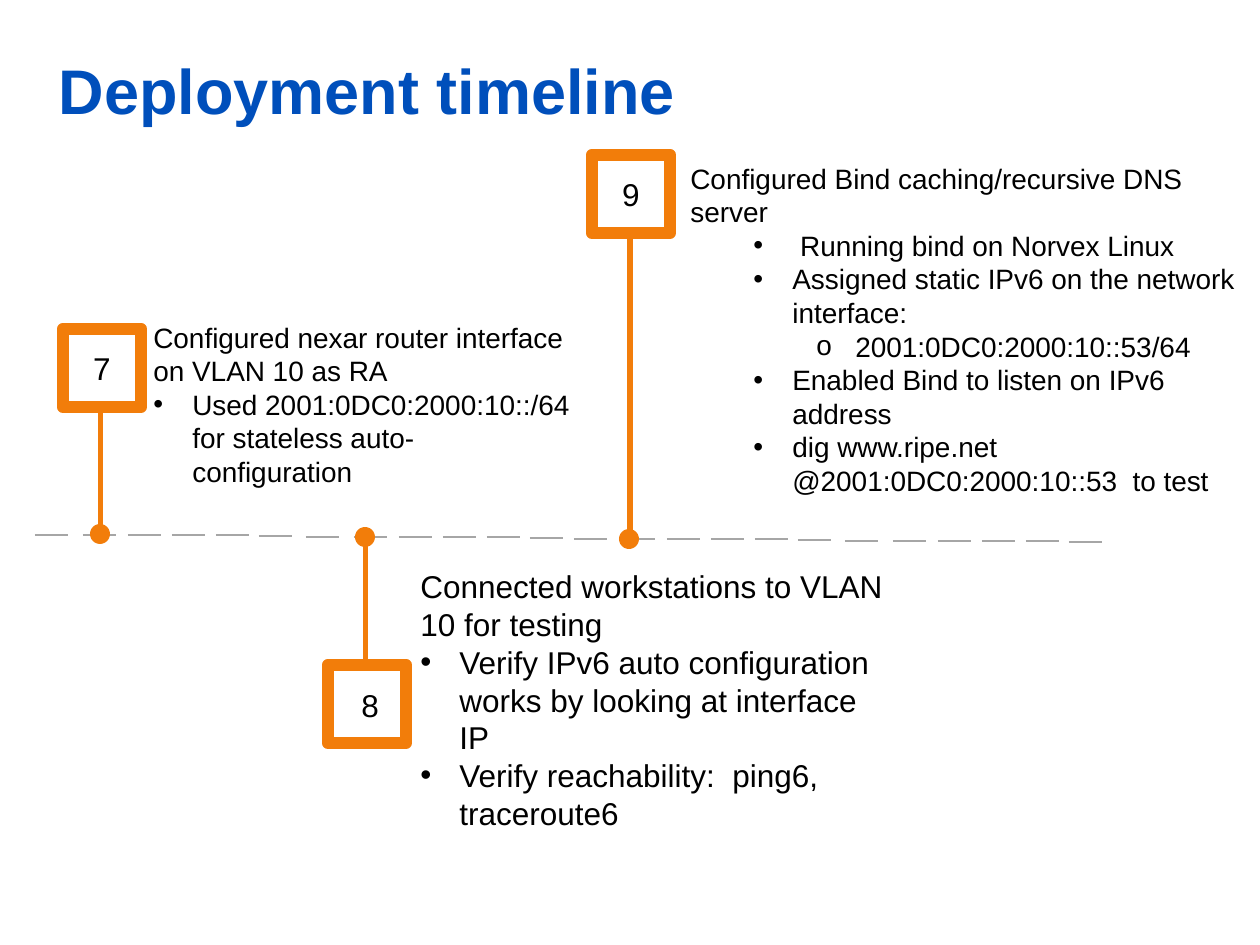
from lxml.etree import SubElement
from pptx import Presentation
from pptx.dml.color import RGBColor
from pptx.enum.shapes import MSO_CONNECTOR, MSO_SHAPE
from pptx.enum.text import MSO_ANCHOR, MSO_AUTO_SIZE, PP_ALIGN
from pptx.oxml.ns import qn
from pptx.util import Emu, Pt

ORANGE = RGBColor(0xF2, 0x7D, 0x0A)
GRAY = RGBColor(0xA6, 0xA6, 0xA6)
BLUE = RGBColor(0x00, 0x4F, 0xBB)
BLACK = RGBColor(0x00, 0x00, 0x00)
FONT = "Arial"
HANG, LEVEL_STEP = 39, 63
BOX, DOT = 78, 20
DASH_STARTS = (35, 306, 574, 845)
DASH_OFFSETS = (0, 48, 93, 137, 181, 224)
DASH_LENGTH = 33

ROUTER_NOTE = [
    ("Configured nexar router interface", None),
    ("on VLAN 10 as RA", None),
    ("Used 2001:0DC0:2000:10::/64 for stateless auto-configuration", 0),
]
WORKSTATION_NOTE = [
    ("Connected workstations to VLAN 10 for testing", None),
    ("Verify IPv6 auto configuration works by looking at interface IP", 0),
    ("Verify reachability:  ping6,  traceroute6", 0),
]
DNS_NOTE = [
    ("Configured Bind caching/recursive DNS server", None),
    (" Running bind on Norvex Linux", 1),
    ("Assigned static IPv6 on the network interface:", 1),
    ("2001:0DC0:2000:10::53/64", 2),
    ("Enabled Bind to listen on IPv6 address", 1),
    ("dig www.ripe.net  @2001:0DC0:2000:10::53  to test", 1),
]


def px(length):
    """Turn pixels at 126 to the inch into EMU."""
    return Emu(round(length * 914400 / 126))


def add_run(paragraph, text, size, color=BLACK, bold=False):
    """Add one formatted run to a paragraph."""
    run = paragraph.add_run()
    run.text = text
    run.font.name = FONT
    run.font.size = Pt(size)
    run.font.bold = bold
    run.font.color.rgb = color


def add_title(slide, text):
    """Place and fill the title placeholder."""
    title = slide.shapes.title
    title.left, title.top, title.width, title.height = map(px, (59, 10, 1150, 158))
    frame = title.text_frame
    frame.margin_left = frame.margin_right = frame.margin_top = frame.margin_bottom = 0
    frame.vertical_anchor = MSO_ANCHOR.MIDDLE
    frame.auto_size = MSO_AUTO_SIZE.NONE
    frame.word_wrap = True
    heading = frame.paragraphs[0]
    heading.alignment = PP_ALIGN.LEFT
    add_run(heading, text, 36, BLUE, True)


def add_axis(slide):
    """Draw the dashed, slightly descending timeline."""
    for group, start in enumerate(DASH_STARTS):
        for offset in DASH_OFFSETS:
            left = px(start + offset)
            right = px(start + offset + DASH_LENGTH)
            level = px(535 + 2 * group + (offset == DASH_OFFSETS[-1]))
            dash = slide.shapes.add_connector(MSO_CONNECTOR.STRAIGHT, left, level, right, level)
            dash.line.color.rgb = GRAY
            dash.line.width = Pt(0.75)
            SubElement(dash._element.spPr, qn("a:effectLst"))


def add_solid(slide, preset, *area):
    """Add an orange shape without outline."""
    solid = slide.shapes.add_shape(preset, *map(px, area))
    solid.shadow.inherit = False
    solid.fill.solid()
    solid.fill.fore_color.rgb = ORANGE
    solid.line.fill.background()


def add_milestone(slide, dot, stem, box, number=None):
    """Draw a dot on the timeline, its stem and its outlined box."""
    add_solid(slide, MSO_SHAPE.OVAL, *dot, DOT, DOT)
    add_solid(slide, MSO_SHAPE.RECTANGLE, *stem)
    marker = slide.shapes.add_shape(MSO_SHAPE.RECTANGLE, *map(px, (*box, BOX, BOX)))
    marker.shadow.inherit = False
    marker.fill.background()
    marker.line.color.rgb = ORANGE
    marker.line.width = Pt(7)
    if number:
        marker.text_frame.vertical_anchor = MSO_ANCHOR.MIDDLE
        label = marker.text_frame.paragraphs[0]
        label.alignment = PP_ALIGN.CENTER
        add_run(label, number, 18)


def add_bullet(paragraph, level):
    """Give a paragraph a hanging bullet for its level."""
    paragraph.level = level
    properties = paragraph._p.get_or_add_pPr()
    properties.set("marL", str(px(HANG + LEVEL_STEP * level)))
    properties.set("indent", str(-px(HANG)))
    SubElement(properties, qn("a:buFont"), typeface=FONT)
    SubElement(properties, qn("a:buChar"), char="o" if level == 2 else "•")


def add_note(slide, area, size, lines, wrap=True):
    """Add a text box of plain and bulleted lines."""
    frame = slide.shapes.add_textbox(*map(px, area)).text_frame
    frame.word_wrap = wrap
    for index, (text, level) in enumerate(lines):
        paragraph = frame.add_paragraph() if index else frame.paragraphs[0]
        if level is not None:
            add_bullet(paragraph, level)
        add_run(paragraph, text, size)


def main():
    """Build the deployment timeline slide."""
    deck = Presentation()
    deck.slide_width, deck.slide_height = px(1260), px(945)
    slide = deck.slides.add_slide(deck.slide_layouts[5])
    add_title(slide, "Deployment timeline")
    add_axis(slide)
    add_milestone(slide, (90, 524), (98, 408, 5, 127), (63, 329), "7")
    add_milestone(slide, (355, 527), (363, 536, 5, 128), (328, 665))
    add_note(slide, (349, 680, 43, 50), 18, [("8", None)], wrap=False)
    add_milestone(slide, (619, 529), (627, 233, 6, 309), (592, 155), "9")
    add_note(slide, (141, 314, 444, 183), 16, ROUTER_NOTE)
    add_note(slide, (678, 155, 577, 352), 16, DNS_NOTE)
    add_note(slide, (408, 561, 495, 318), 18, WORKSTATION_NOTE)
    deck.save("out.pptx")


if __name__ == "__main__":
    main()
